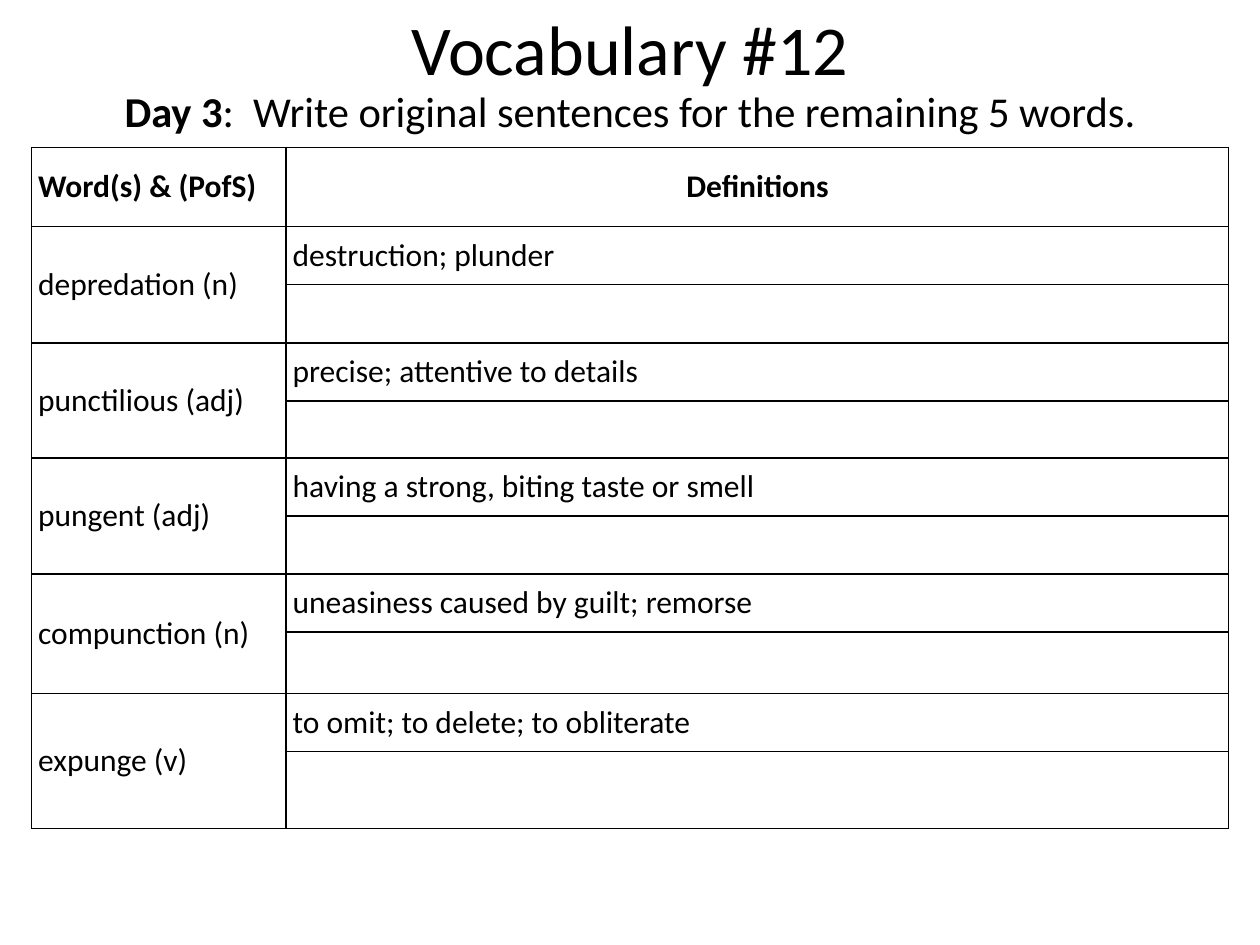
from lxml.etree import SubElement
from pptx import Presentation
from pptx.dml.color import RGBColor
from pptx.enum.text import MSO_ANCHOR, MSO_AUTO_SIZE, PP_ALIGN
from pptx.oxml.ns import qn
from pptx.util import Cm, Pt

BLACK = "000000"
WHITE = "FFFFFF"
HEADERS = ("Word(s) & (PofS)", "Definitions")
ENTRIES = (
    ("depredation (n)", "destruction; plunder"),
    ("punctilious (adj)", "precise; attentive to details"),
    ("pungent (adj)", "having a strong, biting taste or smell"),
    ("compunction (n)", "uneasiness caused by guilt; remorse"),
    ("expunge (v)", "to omit; to delete; to obliterate"),
)
COLUMN_WIDTHS = (5.13, 19)
HEADER_HEIGHT = 1.6
DEFINITION_HEIGHT = 1.17
SENTENCE_HEIGHTS = (1.17, 1.15, 1.17, 1.24, 1.55)


def color(value):
    return RGBColor.from_string(value)


def format_paragraph(para, size, align, bold=False):
    para.alignment = align
    para.font.name = "Calibri"
    para.font.size = Pt(size)
    para.font.bold = bold
    para.font.color.rgb = color(BLACK)


def prepare_frame(frame):
    frame.word_wrap = True
    frame.auto_size = MSO_AUTO_SIZE.NONE
    frame.vertical_anchor = MSO_ANCHOR.MIDDLE


def add_instruction(page):
    title = page.shapes.title
    title.left, title.top = Cm(1.9), Cm(1.17)
    title.width, title.height = Cm(21.6), Cm(2.11)
    prepare_frame(title.text_frame)
    para = title.text_frame.paragraphs[0]
    format_paragraph(para, 24.3, PP_ALIGN.CENTER)
    day = para.add_run()
    day.text = "Day 3"
    day.font.bold = True
    para.add_run().text = ":  Write original sentences for the remaining 5 words."


def add_heading(page):
    box = page.shapes.add_textbox(Cm(1.27), Cm(0), Cm(22.86), Cm(1.93))
    prepare_frame(box.text_frame)
    para = box.text_frame.paragraphs[0]
    para.text = "Vocabulary #12"
    format_paragraph(para, 40, PP_ALIGN.CENTER)


def add_borders(cell):
    properties = cell._tc.get_or_add_tcPr()
    for side in ("a:lnL", "a:lnR", "a:lnT", "a:lnB"):
        line = SubElement(properties, qn(side), w=str(Pt(1)))
        fill = SubElement(line, qn("a:solidFill"))
        SubElement(fill, qn("a:srgbClr"), val=BLACK)


def format_cell(cell):
    add_borders(cell)
    cell.fill.solid()
    cell.fill.fore_color.rgb = color(WHITE)
    cell.vertical_anchor = MSO_ANCHOR.MIDDLE
    cell.margin_left = cell.margin_right = Cm(0.13)
    cell.margin_top = cell.margin_bottom = Cm(0)
    format_paragraph(cell.text_frame.paragraphs[0], 18, PP_ALIGN.LEFT)


def add_vocabulary_table(page):
    heights = [HEADER_HEIGHT]
    for sentence_height in SENTENCE_HEIGHTS:
        heights += [DEFINITION_HEIGHT, sentence_height]
    table = page.shapes.add_table(
        len(heights), len(COLUMN_WIDTHS), Cm(0.64), Cm(2.97),
        Cm(sum(COLUMN_WIDTHS)), Cm(sum(heights)),
    ).table
    for column, width in zip(table.columns, COLUMN_WIDTHS):
        column.width = Cm(width)
    for row, height in zip(table.rows, heights):
        row.height = Cm(height)
    for cell in table.iter_cells():
        format_cell(cell)
    for column, (text, align) in enumerate(zip(HEADERS, (PP_ALIGN.LEFT, PP_ALIGN.CENTER))):
        para = table.cell(0, column).text_frame.paragraphs[0]
        para.text = text
        format_paragraph(para, 18, align, bold=True)
    for index, (word, definition) in enumerate(ENTRIES):
        row = 1 + 2 * index
        table.cell(row, 0).merge(table.cell(row + 1, 0))
        for column, text in enumerate((word, definition)):
            table.cell(row, column).text_frame.paragraphs[0].text = text


def main():
    deck = Presentation()
    deck.slide_width, deck.slide_height = Cm(25.4), Cm(19.05)
    page = deck.slides.add_slide(deck.slide_layouts.get_by_name("Title Only"))
    add_instruction(page)
    add_heading(page)
    add_vocabulary_table(page)
    deck.save("out.pptx")


if __name__ == "__main__":
    main()
